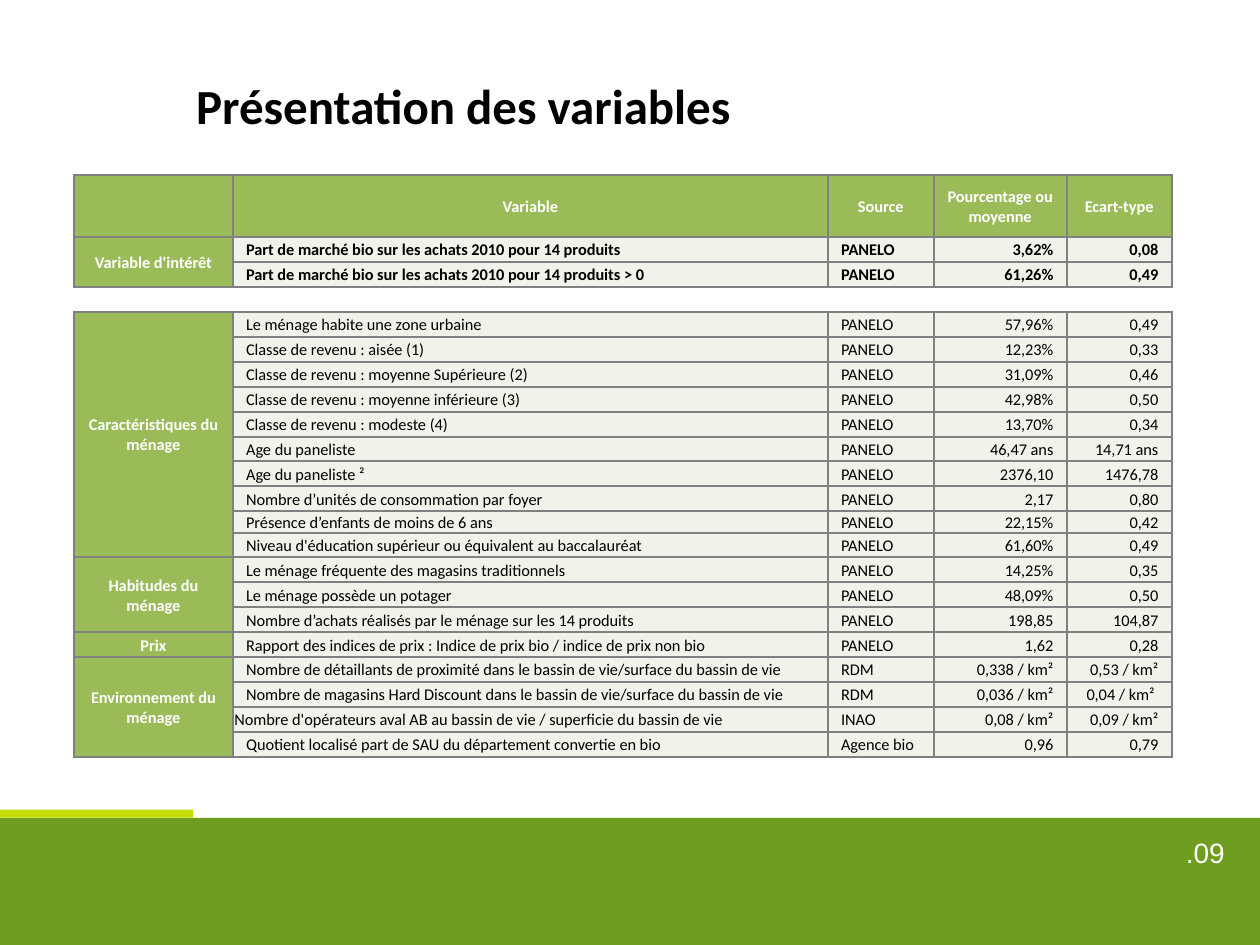
from lxml import etree
from pptx import Presentation
from pptx.dml.color import RGBColor
from pptx.enum.shapes import MSO_SHAPE
from pptx.enum.text import MSO_ANCHOR, PP_ALIGN
from pptx.oxml.ns import qn
from pptx.util import Pt

RECT = MSO_SHAPE.RECTANGLE
MIDDLE, TOP = MSO_ANCHOR.MIDDLE, MSO_ANCHOR.TOP
LEFT, CENTER, RIGHT = PP_ALIGN.LEFT, PP_ALIGN.CENTER, PP_ALIGN.RIGHT

TITLE = "Présentation des variables"
PAGE = ".09"
HEADER = ("", "Variable", "Source", "Pourcentage ou moyenne", "Ecart-type")
PANEL, PRESS = "PANELO", "RDM"
INTEREST = "Variable d'intérêt"
TIGHT = "Nombre d'opérateurs aval AB au bassin de vie / superficie du bassin de vie"
SHORT = "Présence d’enfants de moins de 6 ans"
GROUPS = [
    (INTEREST, [
        ("Part de marché bio sur les achats 2010 pour 14 produits", PANEL, "3,62%", "0,08"),
        ("Part de marché bio sur les achats 2010 pour 14 produits > 0", PANEL, "61,26%", "0,49"),
    ]),
    (None, [("", "", "", "")]),
    ("Caractéristiques du ménage", [
        ("Le ménage habite une zone urbaine", PANEL, "57,96%", "0,49"),
        ("Classe de revenu : aisée (1)", PANEL, "12,23%", "0,33"),
        ("Classe de revenu : moyenne Supérieure (2)", PANEL, "31,09%", "0,46"),
        ("Classe de revenu : moyenne inférieure (3)", PANEL, "42,98%", "0,50"),
        ("Classe de revenu : modeste (4)", PANEL, "13,70%", "0,34"),
        ("Age du paneliste", PANEL, "46,47 ans", "14,71 ans"),
        ("Age du paneliste ²", PANEL, "2376,10", "1476,78"),
        ("Nombre d’unités de consommation par foyer", PANEL, "2,17", "0,80"),
        (SHORT, PANEL, "22,15%", "0,42"),
        ("Niveau d'éducation supérieur ou équivalent au baccalauréat", PANEL, "61,60%", "0,49"),
    ]),
    ("Habitudes du ménage", [
        ("Le ménage fréquente des magasins traditionnels", PANEL, "14,25%", "0,35"),
        ("Le ménage possède un potager", PANEL, "48,09%", "0,50"),
        ("Nombre d’achats réalisés par le ménage sur les 14 produits", PANEL, "198,85", "104,87"),
    ]),
    ("Prix", [
        ("Rapport des indices de prix : Indice de prix bio / indice de prix non bio",
         PANEL, "1,62", "0,28"),
    ]),
    ("Environnement du ménage", [
        ("Nombre de détaillants de proximité dans le bassin de vie/surface du bassin de vie",
         PRESS, "0,338 / km²", "0,53 / km²"),
        ("Nombre de magasins Hard Discount dans le bassin de vie/surface du bassin de vie",
         PRESS, "0,036 / km²", "0,04 / km² "),
        (TIGHT, "INAO", "0,08 / km²", "0,09 / km²"),
        ("Quotient localisé part de SAU du département convertie en bio", "Agence bio", "0,96", "0,79"),
    ]),
]
COL_W = (68.1, 255, 45.4, 57, 45)
HEAD_H, ROW_H, SHORT_H = 26.6, 10.7, 9
ALIGNS = (LEFT, LEFT, RIGHT, RIGHT)
GREEN, PALE, WHITE, BLACK, GREY = "9BBB59", "EFF3EA", "FFFFFF", "000000", "808080"
BANDS = [(0, 350.5, 540, 54.5, "6F9D20"), (0, 347, 82.8, 3.5, "C5DD01")]


def rgb(h):
    return RGBColor.from_string(h)


def add_run(p, text, size, font, color, bold=False):
    r = p.add_run()
    r.text = text
    r.font.size, r.font.name, r.font.bold = Pt(size), font, bold
    r.font.color.rgb = rgb(color)


def add_text(s, box, text, size, font, color, bold, align, anchor):
    tf = s.shapes.add_textbox(*map(Pt, box)).text_frame
    tf.word_wrap = True
    tf.vertical_anchor = anchor
    p = tf.paragraphs[0]
    p.alignment = align
    add_run(p, text, size, font, color, bold)


def fill_cell(cell, text, fill, align=CENTER, color=WHITE, bold=True, sides="LRTB"):
    tcPr = cell._tc.get_or_add_tcPr()
    for side in "LRTB":
        ln = etree.SubElement(tcPr, qn("a:ln" + side), w=str(Pt(1)))
        if side in sides:
            paint = etree.SubElement(ln, qn("a:solidFill"))
            etree.SubElement(paint, qn("a:srgbClr"), val=GREY)
        else:
            etree.SubElement(ln, qn("a:noFill"))
    cell.fill.solid()
    cell.fill.fore_color.rgb = rgb(fill)
    cell.vertical_anchor = MIDDLE
    cell.margin_left = cell.margin_right = Pt(0.7 if text == TIGHT else 5.7)
    cell.margin_top, cell.margin_bottom = Pt(0.7), Pt(0)
    p = cell.text_frame.paragraphs[0]
    p.alignment = align
    if text:
        add_run(p, text, 7, "Calibri", color, bold)
    else:
        etree.SubElement(p._p, qn("a:endParaRPr"), sz="700")


def add_variables(s):
    heights = [HEAD_H] + [SHORT_H if row[0] == SHORT else ROW_H
                          for _, rows in GROUPS for row in rows]
    frame = s.shapes.add_table(len(heights), len(COL_W), Pt(31.7), Pt(75),
                               Pt(sum(COL_W)), Pt(sum(heights)))
    table = frame.table
    table.first_row = table.horz_banding = False
    for col, w in zip(table.columns, COL_W):
        col.width = Pt(w)
    for row, h in zip(table.rows, heights):
        row.height = Pt(h)
    for c, text in enumerate(HEADER):
        fill_cell(table.cell(0, c), text, GREEN)
    top = 1
    for group, rows in GROUPS:
        gap = group is None
        sides = "TB" if gap else "LRTB"
        for i, row in enumerate(rows):
            label = group if group and i == 0 else ""
            fill_cell(table.cell(top + i, 0), label, WHITE if gap else GREEN, sides=sides)
            for c, (text, align) in enumerate(zip(row, ALIGNS), 1):
                fill_cell(table.cell(top + i, c), text, WHITE if gap else PALE,
                          align, BLACK, group == INTEREST, sides)
        if len(rows) > 1:
            table.cell(top, 0).merge(table.cell(top + len(rows) - 1, 0))
        top += len(rows)


def main():
    prs = Presentation()
    prs.slide_width, prs.slide_height = Pt(540), Pt(405)
    s = prs.slides.add_slide(prs.slide_layouts[6])
    for *box, color in BANDS:
        sp = s.shapes.add_shape(RECT, *map(Pt, box))
        sp.shadow.inherit = False
        sp.fill.solid()
        sp.fill.fore_color.rgb = rgb(color)
        sp.line.fill.background()
    add_text(s, (466, 355.7, 66, 19.4), PAGE, 12, "Arial", WHITE, False, RIGHT, MIDDLE)
    add_variables(s)
    add_text(s, (77, 28.8, 340, 32.4), TITLE, 21, "Calibri", BLACK, True, LEFT, TOP)
    prs.save("out.pptx")


if __name__ == "__main__":
    main()
